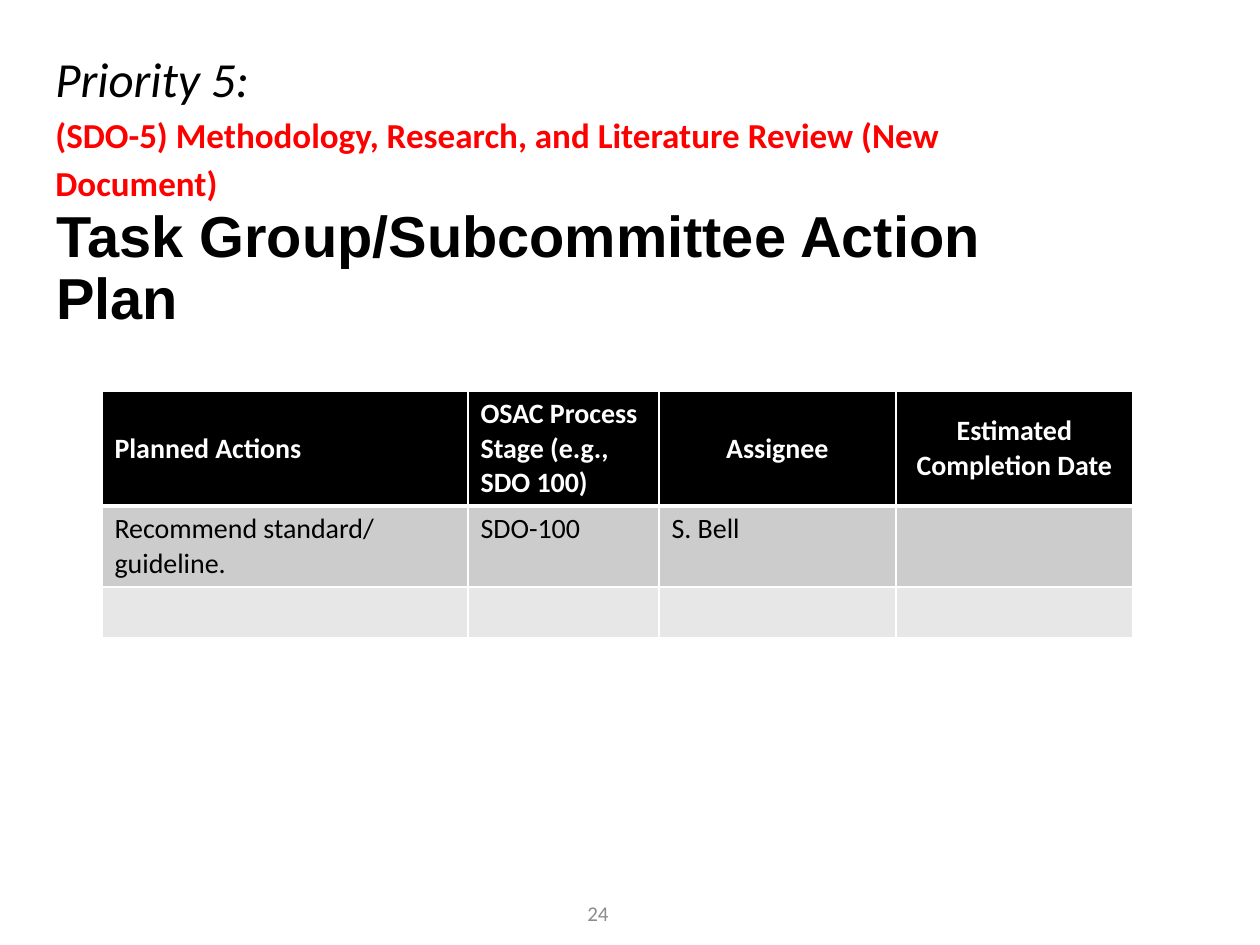
from dataclasses import dataclass

from lxml.etree import fromstring
from pptx import Presentation
from pptx.dml.color import RGBColor
from pptx.enum.text import MSO_ANCHOR, PP_ALIGN
from pptx.oxml.ns import nsdecls
from pptx.util import Emu, Pt

SCALE = 914400 / 126
BLACK = RGBColor(0x00, 0x00, 0x00)
WHITE = RGBColor(0xFF, 0xFF, 0xFF)
RED = RGBColor(0xFF, 0x00, 0x00)
GREY = RGBColor(0x8C, 0x8C, 0x8C)
DARK = RGBColor(0xCC, 0xCC, 0xCC)
LIGHT = RGBColor(0xE7, 0xE7, 0xE7)


@dataclass
class Line:
    text: str
    size: int
    color: RGBColor
    font: str = "Calibri"
    bold: bool = False
    italic: bool = False
    align: PP_ALIGN = PP_ALIGN.LEFT
    space: float = 1.0


@dataclass
class Box:
    left: int
    top: int
    width: int
    height: int
    anchor: MSO_ANCHOR
    lines: list[Line]


@dataclass
class Row:
    height: int
    fill: RGBColor
    color: RGBColor
    texts: list[str]
    head: bool = False


def px(num: int) -> Emu:
    return Emu(round(num * SCALE))


def write(para, line: Line) -> None:
    para.alignment = line.align
    para.line_spacing = line.space
    run = para.add_run()
    run.text = line.text
    run.font.color.rgb = line.color
    style = {"name": line.font, "size": Pt(line.size),
             "bold": line.bold, "italic": line.italic}
    for key, value in style.items():
        setattr(run.font, key, value)


def add_box(slide, box: Box) -> None:
    shape = slide.shapes.add_textbox(
        px(box.left), px(box.top), px(box.width), px(box.height))
    frame = shape.text_frame
    frame.word_wrap = True
    frame.vertical_anchor = box.anchor
    for num, line in enumerate(box.lines):
        para = frame.add_paragraph() if num else frame.paragraphs[0]
        write(para, line)


def add_edges(cell, sides: dict[str, int]) -> None:
    props = cell._tc.get_or_add_tcPr()
    for spot, (side, width) in enumerate(sides.items()):
        props.insert(spot, fromstring(
            f'<a:ln{side} {nsdecls("a")} w="{Pt(width)}"><a:solidFill>'
            f'<a:srgbClr val="{WHITE}"/></a:solidFill></a:ln{side}>'))


def add_grid(slide, left: int, top: int, cols: list[int], rows: list[Row]) -> None:
    high = sum(row.height for row in rows)
    grid = slide.shapes.add_table(
        len(rows), len(cols), px(left), px(top), px(sum(cols)), px(high)).table
    for col, width in zip(grid.columns, cols):
        col.width = px(width)
    for y, row in enumerate(rows):
        grid.rows[y].height = px(row.height)
        for x, text in enumerate(row.texts):
            cell = grid.cell(y, x)
            cell.fill.solid()
            cell.fill.fore_color.rgb = row.fill
            cell.vertical_anchor = MSO_ANCHOR.MIDDLE if row.head else MSO_ANCHOR.TOP
            add_edges(cell, {"L": 1, "R": 1, "T": 3 if y == 1 else 1,
                             "B": 3 if row.head else 1})
            if text:
                align = PP_ALIGN.CENTER if row.head and x > 1 else PP_ALIGN.LEFT
                write(cell.text_frame.paragraphs[0],
                      Line(text, 16, row.color, bold=row.head, align=align))


BOXES = [
    # Title
    Box(44, 178, 1086, 183, MSO_ANCHOR.MIDDLE, [
        Line("Task Group/Subcommittee Action Plan", 33, BLACK, "Arial",
             bold=True, space=0.9)]),
    # Priority heading
    Box(43, 42, 1036, 170, MSO_ANCHOR.TOP, [
        Line("Priority 5:", 28, BLACK, italic=True),
        Line("(SDO-5) Methodology, Research, and Literature Review (New Document)",
             20, RED, bold=True, space=1.15)]),
    # Slide number
    Box(456, 888, 284, 50, MSO_ANCHOR.MIDDLE, [
        Line("24", 12, GREY, align=PP_ALIGN.CENTER)]),
]

COLS = [366, 191, 237, 237]
ROWS = [
    Row(115, BLACK, WHITE, ["Planned Actions", "OSAC Process Stage (e.g., SDO 100)",
                            "Assignee", "Estimated Completion Date"], head=True),
    Row(81, DARK, BLACK, ["Recommend standard/ guideline.", "SDO-100", "S. Bell", ""]),
    Row(50, LIGHT, BLACK, [""] * 4),
]


def main() -> None:
    deck = Presentation()
    deck.slide_width, deck.slide_height = px(1260), px(945)
    slide = deck.slides.add_slide(deck.slide_layouts[6])
    for box in BOXES:
        add_box(slide, box)
    # Action plan table
    add_grid(slide, 102, 391, COLS, ROWS)
    deck.save("out.pptx")


if __name__ == "__main__":
    main()
